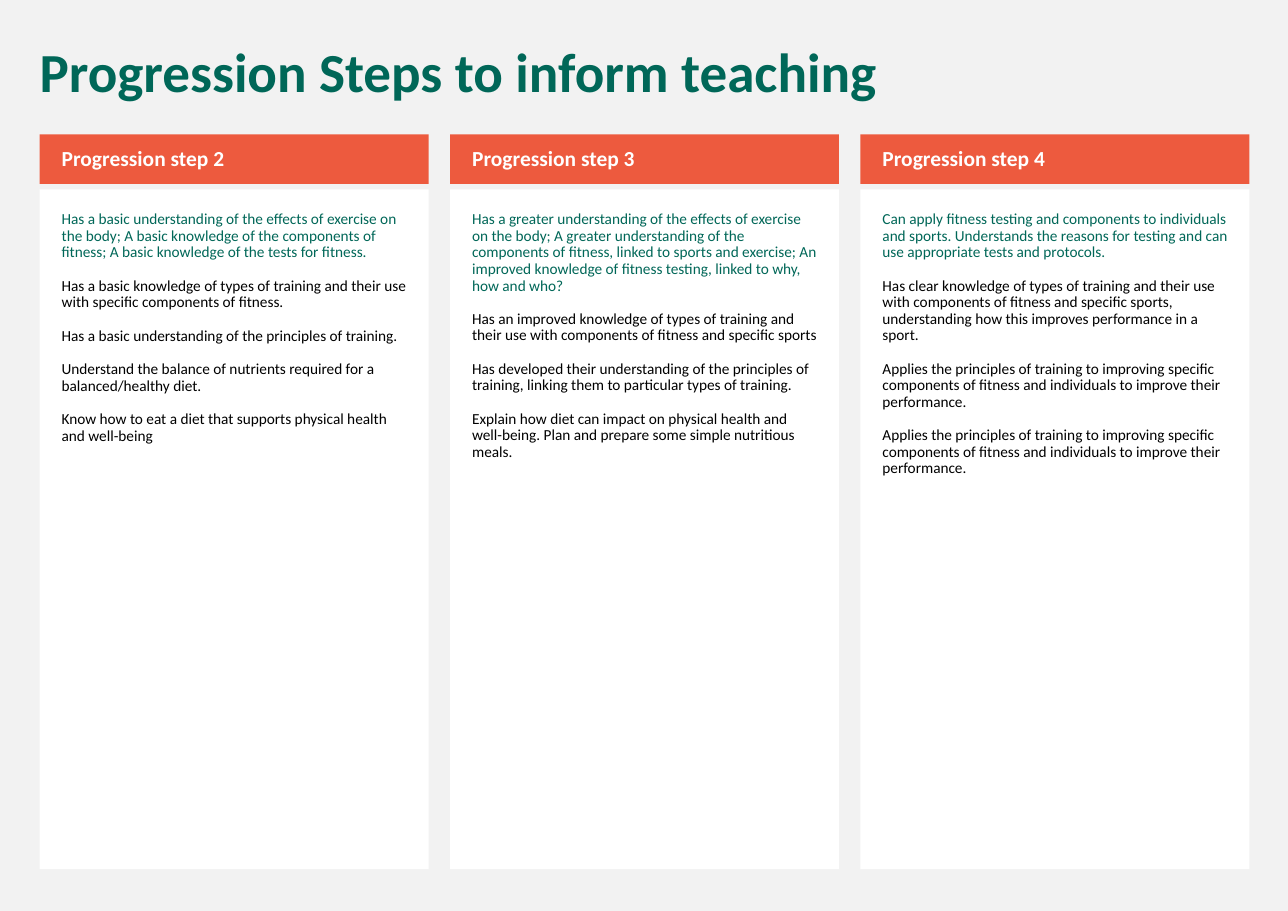
from dataclasses import dataclass

from lxml import etree
from pptx import Presentation
from pptx.dml.color import RGBColor
from pptx.enum.shapes import MSO_SHAPE
from pptx.enum.text import MSO_ANCHOR, MSO_AUTO_SIZE, PP_ALIGN
from pptx.oxml.ns import qn
from pptx.util import Pt

RECTANGLE = MSO_SHAPE.RECTANGLE
TOP, MIDDLE = MSO_ANCHOR.TOP, MSO_ANCHOR.MIDDLE
LEFT = PP_ALIGN.LEFT
NO_AUTOFIT = MSO_AUTO_SIZE.NONE
COMPARISON_LAYOUT = 4


@dataclass(frozen=True)
class Theme:
    font: str = "Calibri"
    background: RGBColor = RGBColor(0xF2, 0xF2, 0xF2)
    green: RGBColor = RGBColor(0x00, 0x67, 0x58)
    orange: RGBColor = RGBColor(0xED, 0x5A, 0x3E)
    white: RGBColor = RGBColor(0xFF, 0xFF, 0xFF)
    black: RGBColor = RGBColor(0x00, 0x00, 0x00)
    title_size: int = 36
    heading_size: int = 14
    body_size: int = 10


THEME = Theme()

STEPS = [
    ("Progression step 2", [
        "Has a basic understanding of the effects of exercise on the body; A basic knowledge "
        "of the components of fitness; A basic knowledge of the tests for fitness.",
        "Has a basic knowledge of types of training and their use with specific components of fitness.",
        "Has a basic understanding of the principles of training.",
        "Understand the balance of nutrients required for a balanced/healthy diet.",
        "Know how to eat a diet that supports physical health and well-being",
    ]),
    ("Progression step 3", [
        "Has a greater understanding of the effects of exercise on the body; A greater "
        "understanding of the components of fitness, linked to sports and exercise; An improved "
        "knowledge of fitness testing, linked to why, how and who?",
        "Has an improved knowledge of types of training and their use with components of fitness "
        "and specific sports",
        "Has developed their understanding of the principles of training, linking them to "
        "particular types of training.",
        "Explain how diet can impact on physical health and well-being. Plan and prepare some "
        "simple nutritious meals.",
    ]),
    ("Progression step 4", [
        "Can apply fitness testing and components to individuals and sports. Understands the "
        "reasons for testing and can use appropriate tests and protocols.",
        "Has clear knowledge of types of training and their use with components of fitness and "
        "specific sports, understanding how this improves performance in a sport.",
    ] + 2 * [
        "Applies the principles of training to improving specific components of fitness and "
        "individuals to improve their performance.",
    ]),
]

COLUMN_LEFT, COLUMN_PITCH, COLUMN_WIDTH = 25.92, 268.2, 254.16
HEADING_TOP, HEADING_HEIGHT = 87.84, 32.4
BODY_TOP, BODY_HEIGHT = 123.84, 444.24


def place(shape, left, top, width, height, insets, anchor, fill=None):
    box = {"left": left, "top": top, "width": width, "height": height}
    for name, value in box.items():
        setattr(shape, name, Pt(value))
    frame = shape.text_frame
    for side, inset in zip(("left", "top", "right", "bottom"), insets):
        setattr(frame, f"margin_{side}", Pt(inset))
    layout = {"word_wrap": True, "auto_size": NO_AUTOFIT, "vertical_anchor": anchor}
    for name, value in layout.items():
        setattr(frame, name, value)
    if fill is not None:
        shape.fill.solid()
        shape.fill.fore_color.rgb = fill
        shape.line.fill.background()


def write(shape, texts, colors, size, bold=False):
    """Fill the shape with one unbulleted paragraph per text, each in its own colour."""
    frame = shape.text_frame
    for index, (text, color) in enumerate(zip(texts, colors)):
        paragraph = frame.add_paragraph() if index else frame.paragraphs[0]
        spacing = {"alignment": LEFT, "line_spacing": 0.9,
                   "space_before": Pt(11), "space_after": Pt(0)}
        for name, value in spacing.items():
            setattr(paragraph, name, value)
        properties = paragraph._p.get_or_add_pPr()
        properties.set("marL", "0")
        properties.set("indent", "0")
        etree.SubElement(properties, qn("a:buNone"))
        run = paragraph.add_run()
        run.text = text
        for name, value in {"name": THEME.font, "size": Pt(size), "bold": bold}.items():
            setattr(run.font, name, value)
        run.font.color.rgb = color


presentation = Presentation()
presentation.slide_width = Pt(841.68)
presentation.slide_height = Pt(595.44)
slide = presentation.slides.add_slide(presentation.slide_layouts[COMPARISON_LAYOUT])
slide.background.fill.solid()
slide.background.fill.fore_color.rgb = THEME.background

title = slide.shapes.title
place(title, 18.72, 25.92, 797.76, 46.8, (7.2, 3.6, 7.2, 3.6), TOP)
write(title, ["Progression Steps to inform teaching"], [THEME.green], THEME.title_size, bold=True)

# The layout offers two heading-and-list pairs; the third column uses rectangles.
column_parts = list(slide.placeholders)[1:]
for _ in range(2):
    rectangle = slide.shapes.add_shape(RECTANGLE, 0, 0, 0, 0)
    rectangle.shadow.inherit = False
    column_parts.append(rectangle)

for column, (step, statements) in enumerate(STEPS):
    heading, body = column_parts[2 * column:2 * column + 2]
    left = COLUMN_LEFT + column * COLUMN_PITCH
    place(heading, left, HEADING_TOP, COLUMN_WIDTH, HEADING_HEIGHT,
          (14.4, 3.6, 7.2, 3.6), MIDDLE, THEME.orange)
    write(heading, [step], [THEME.white], THEME.heading_size, bold=True)
    place(body, left, BODY_TOP, COLUMN_WIDTH, BODY_HEIGHT, 4 * (14.4,), TOP, THEME.white)
    colors = [THEME.green] + [THEME.black] * (len(statements) - 1)
    write(body, statements, colors, THEME.body_size)

presentation.save("out.pptx")
